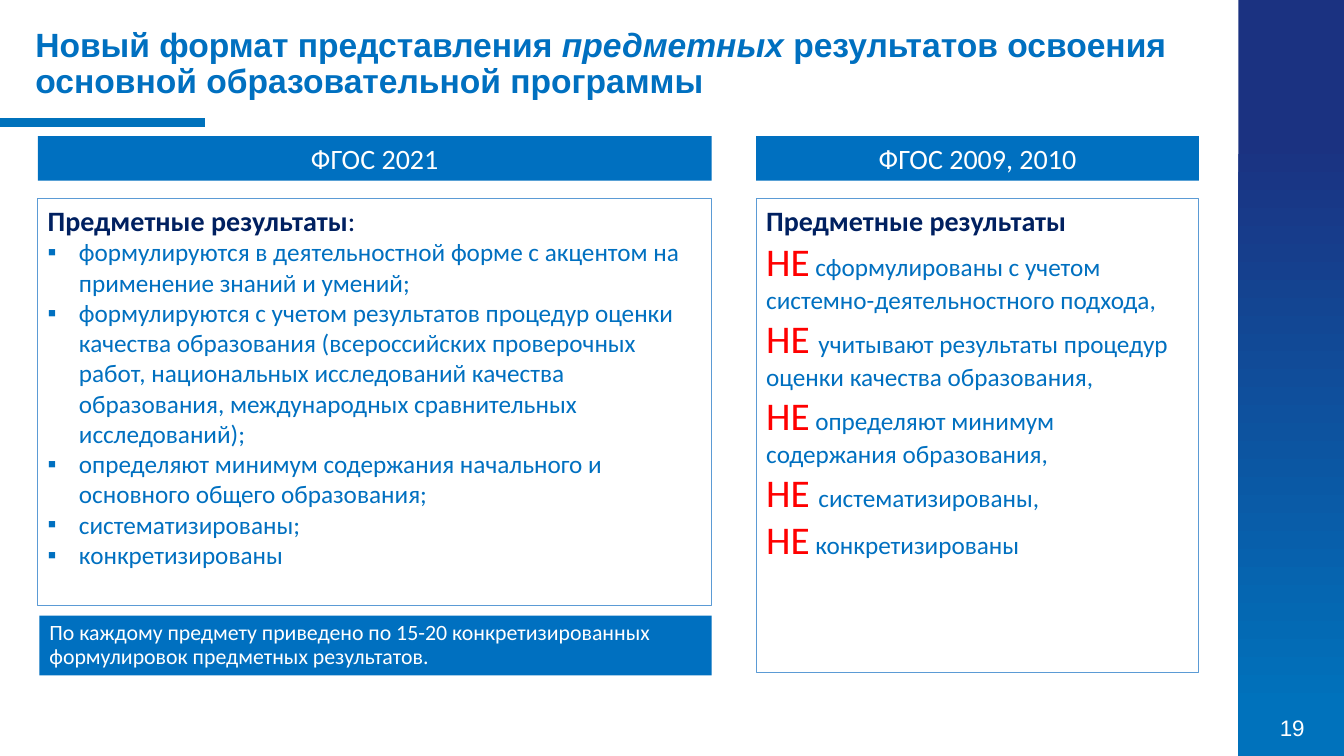
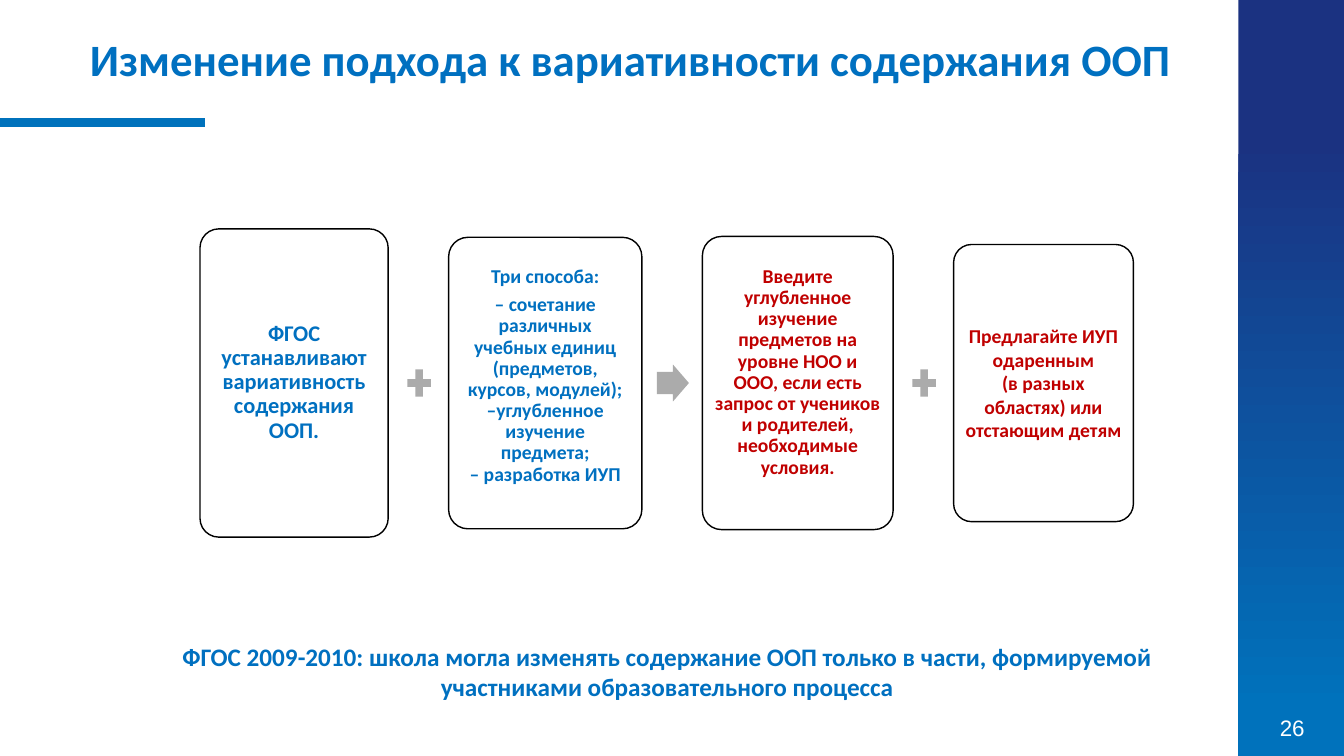
from lxml import etree
from pptx import Presentation, util as u
from pptx.dml.color import RGBColor
from pptx.enum import shapes, text
from pptx.oxml.ns import qn

BLUE = RGBColor(0x00, 0x70, 0xC0)
BAND = RGBColor(0x00, 0x72, 0xBC)
DEEP = RGBColor(0x1B, 0x32, 0x81)
NAVY = RGBColor(0x00, 0x20, 0x60)
EDGE = RGBColor(0x5B, 0x9B, 0xD5)
RED = RGBColor(0xFF, 0x00, 0x00)
DARK = RGBColor(0xC0, 0x00, 0x00)
GREY = RGBColor(0xAB, 0xAB, 0xAB)
BLACK = RGBColor(0x00, 0x00, 0x00)
WHITE = RGBColor(0xFF, 0xFF, 0xFF)

KIND = shapes.MSO_SHAPE
LEFT, MID = text.PP_ALIGN.LEFT, text.PP_ALIGN.CENTER
TOP, HALF = text.MSO_ANCHOR.TOP, text.MSO_ANCHOR.MIDDLE

deck = Presentation()
deck.slide_width, deck.slide_height = u.Inches(13.33), u.Inches(7.5)
CELL = deck.slide_height / 90  # the grid has 160 columns and 90 rows


def box(slide, kind, spot, fill=None, edge=None, width=0.75):
    """Add a shape, or a text box if kind is None; spot is in grid cells."""
    area = [round(n * CELL) for n in spot]
    if kind is None:
        return slide.shapes.add_textbox(*area)
    shape = slide.shapes.add_shape(kind, *area)
    shape.shadow.inherit = False
    for part, color in ((shape.fill, fill), (shape.line.fill, edge)):
        if color is None:
            part.background()
        else:
            part.solid()
            part.fore_color.rgb = color
    if edge is not None:
        shape.line.width = u.Pt(width)
    return shape


def write(shape, rows, size, color, bold=False, font="Calibri",
          align=LEFT, anchor=TOP, space=1.0):
    """Fill a shape with paragraphs; a bar in a row starts a new run."""
    frame = shape.text_frame
    frame.word_wrap = True
    frame.auto_size = text.MSO_AUTO_SIZE.NONE
    frame.vertical_anchor = anchor
    frame.text = "\n".join(row.split("|")[0] for row in rows)
    for para, row in zip(frame.paragraphs, rows):
        para.alignment, para.line_spacing = align, space
        for more in row.split("|")[1:]:
            para.add_run().text = more
        for run in para.runs:
            run.font.name, run.font.size = font, u.Pt(size)
            run.font.bold, run.font.color.rgb = bold, color
    return frame.paragraphs


# Shared parts: title, side band, page number, rule
pages = [
    ("19", "Новый формат представления |предметных| результатов освоения "
           "основной образовательной программы",
     "Arial", 24, 0.9, (3, 1.4, 141.6, 12.5)),
    ("26", "Изменение подхода к вариативности содержания ООП",
     "Calibri", 32, 1.0, (9.5, 3.1, 139.6, 7.7)),
]
for num, head, font, size, space, spot in pages:
    page = deck.slides.add_slide(deck.slide_layouts[5])
    title = page.shapes.title
    title.left, title.top, title.width, title.height = [
        round(n * CELL) for n in spot]
    write(title, [head], size, BLUE, True, font, LEFT, HALF, space)

    band = box(page, KIND.RECTANGLE, (147.4, 0, 12.6, 90))
    band.fill.gradient()
    band.fill.gradient_angle = 270
    for stop, color, share in zip(band.fill.gradient_stops,
                                  (DEEP, BAND), (0.18, 0.94)):
        stop.color.rgb, stop.position = color, share

    label = box(page, None, (149, 84.2, 9.6, 4.9))
    write(label, [num], 16, WHITE, font="Arial", align=MID, anchor=HALF)

    high = round(14.6 * CELL)
    rule = page.shapes.add_connector(
        shapes.MSO_CONNECTOR.STRAIGHT, 0, high, round(24.4 * CELL), high)
    rule.line.color.rgb, rule.line.width = BAND, u.Pt(6)
    etree.SubElement(rule._element.spPr, qn("a:effectLst"))

first, last = deck.slides
first.shapes.title.text_frame.paragraphs[0].runs[1].font.italic = True

# Two columns: new and old standards
new = ["Предметные результаты|:",
       "формулируются в деятельностной форме с акцентом на применение знаний "
       "и умений;",
       "формулируются с учетом результатов процедур оценки качества "
       "образования (всероссийских проверочных работ, национальных "
       "исследований качества образования, международных сравнительных "
       "исследований);",
       "определяют минимум содержания начального и основного общего "
       "образования;",
       "систематизированы;",
       "конкретизированы"]
old = ["Предметные результаты",
       "НЕ| сформулированы с учетом системно-деятельностного подхода,",
       "НЕ |учитывают результаты процедур оценки качества образования,",
       "НЕ| определяют минимум содержания образования,",
       "НЕ |систематизированы,",
       "НЕ| конкретизированы"]
lists = []
for x, wide, tall, head, rows in (
        (4.5, 80.2, 48.5, "ФГОС 2021", new),
        (90, 52.7, 56.5, "ФГОС 2009, 2010", old)):
    bar = box(first, KIND.RECTANGLE, (x, 16.2, wide, 5.3), BLUE)
    write(bar, [head], 20, WHITE, align=MID)
    body = box(first, KIND.RECTANGLE, (x, 23.6, wide, tall), edge=EDGE)
    paras = write(body, rows, 18, BLUE)
    for run in paras[0].runs:
        run.font.size, run.font.color.rgb = u.Pt(20), NAVY
    paras[0].runs[0].font.bold = True
    lists.append(paras[1:])

for para in lists[0]:
    props = para._p.get_or_add_pPr()
    props.set("marL", str(u.Inches(0.31)))
    props.set("indent", str(-u.Inches(0.31)))
    etree.SubElement(props, qn("a:buFont")).set("typeface", "Arial")
    etree.SubElement(props, qn("a:buChar")).set("char", "▪")
for para in lists[1]:
    lead = para.runs[0].font
    lead.size, lead.color.rgb = u.Pt(28), RED

note = box(first, KIND.RECTANGLE, (4.7, 73.3, 80, 7.1), BLUE)
write(note, ["По каждому предмету приведено по 15-20 конкретизированных "
             "формулировок предметных результатов."],
      15.6, WHITE, anchor=HALF, space=0.9)

# Row of cards joined by signs
cards = [
    (22.4, 36.7, 16, BLUE, 0.9, 0.07, KIND.MATH_PLUS,
     ["ФГОС устанавливают вариативность содержания ООП."]),
    (23, 34.7, 14, BLUE, 0.9, 0.2, KIND.RIGHT_ARROW,
     ["Три способа:",
      "– сочетание различных учебных единиц (предметов, курсов, модулей);",
      "–углубленное изучение предмета;",
      "– разработка ИУП"]),
    (22.7, 34.9, 14, DARK, 0.9, 0.27, KIND.MATH_PLUS,
     ["Введите углубленное изучение предметов на уровне НОО и ООО, если есть "
      "запрос от учеников и родителей, необходимые условия."]),
    (21.4, 33, 14, DARK, 1.0, 0.06, None,
     ["Предлагайте ИУП одаренным", "(в разных областях) или",
      "отстающим детям"]),
]
x, axis, gap = 23.8, 45.6, 7.2
for wide, tall, size, color, space, foot, sign, rows in cards:
    card = box(last, KIND.ROUNDED_RECTANGLE,
               (x, axis - tall / 2, wide, tall), WHITE, BLACK, 1)
    card.adjustments[0] = 0.1
    frame = card.text_frame
    frame.margin_left = frame.margin_right = frame.margin_top = u.Inches(0.06)
    frame.margin_bottom = u.Inches(foot)
    paras = write(card, rows, size, color, True, align=MID, anchor=HALF,
                  space=space)
    if sign == KIND.RIGHT_ARROW:
        paras[0].space_after = u.Pt(5)
    x += wide + gap
    if sign is not None:
        mark = box(last, sign, (x - 5.4, axis - 2.2, 3.8, 4.4), GREY)
        if sign == KIND.RIGHT_ARROW:
            mark.adjustments[0] = 0.6

close = box(last, None, (18.5, 75.7, 121.8, 12.1))
write(close, ["ФГОС 2009-2010: школа могла изменять содержание ООП только в "
              "части, формируемой участниками образовательного процесса"],
      18, BLUE, True, align=MID)

deck.save("out.pptx")
